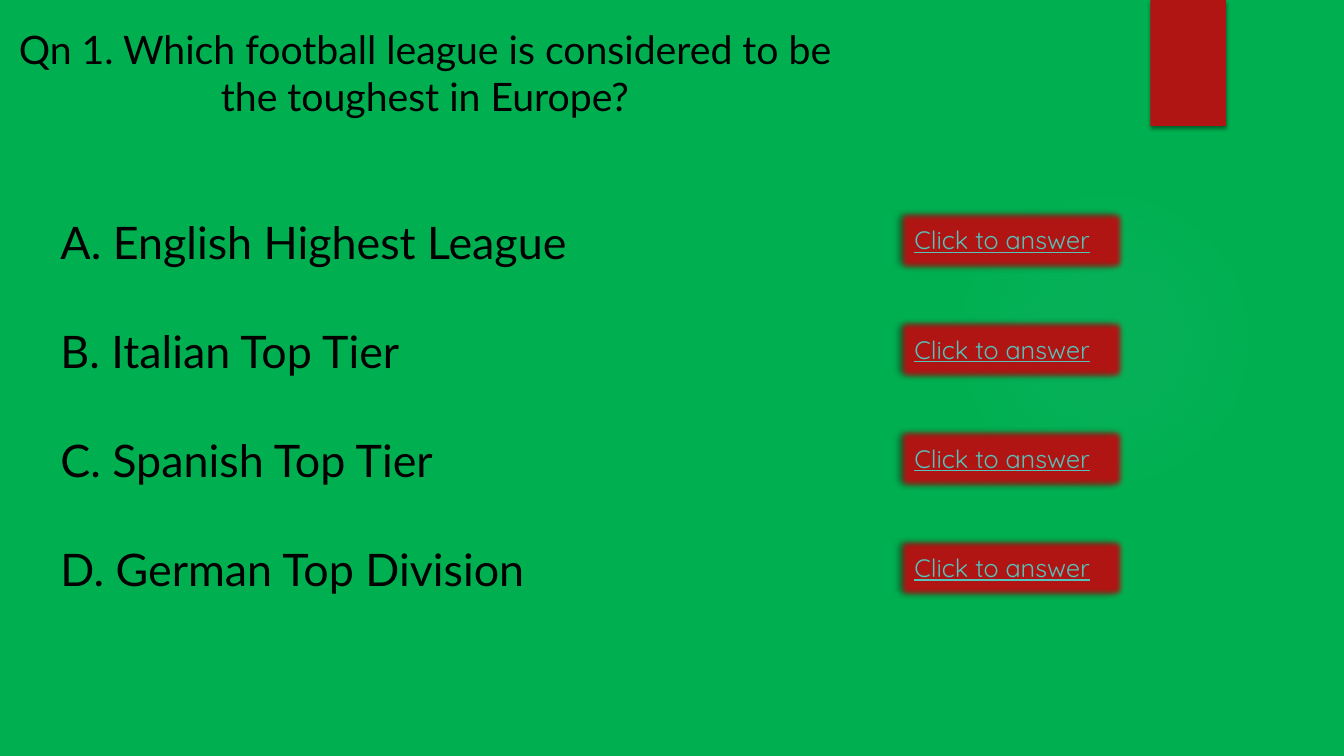
from dataclasses import dataclass

from lxml.etree import SubElement
from pptx import Presentation
from pptx.dml.color import RGBColor
from pptx.enum.shapes import MSO_SHAPE
from pptx.enum.text import MSO_ANCHOR, PP_ALIGN
from pptx.oxml import parse_xml
from pptx.oxml.ns import nsdecls, qn
from pptx.util import Inches, Pt


@dataclass(frozen=True)
class Theme:
    """Colours, fonts and type sizes of the quiz."""
    pitch: str = "00B050"
    ink: str = "000000"
    red: str = "B01513"
    red_edge: str = "82100E"
    glow: str = "50B9C1"
    link: str = "58C1BA"
    text_font: str = "Lato"
    button_font: str = "Quicksand"
    question_size: int = 28
    answer_size: int = 32
    button_size: int = 18


THEME = Theme()
QUESTION = "Qn 1. Which football league is considered to be the toughest in Europe?"
ANSWERS = [
    "A. English Highest League",
    "B. Italian Top Tier",
    "C. Spanish Top Tier",
    "D. German Top Division",
]
BUTTON_LABEL = "Click to answer"
FIRST_ROW = 2.08
ROW_STEP = 3.25 / 3


def write(frame, text, font, size, color, align=PP_ALIGN.LEFT, underline=False):
    """Write one wrapped run at the top of a text frame."""
    frame.word_wrap = True
    frame.vertical_anchor = MSO_ANCHOR.TOP
    paragraph = frame.paragraphs[0]
    paragraph.alignment = align
    run = paragraph.add_run()
    run.text = text
    run.font.name = font
    run.font.size = Pt(size)
    run.font.underline = underline
    run.font.color.rgb = RGBColor.from_string(color)


def add_panel(shapes, left, top, width, height, edge=None):
    """Add a red rectangle, outlined only if an edge colour is given."""
    panel = shapes.add_shape(MSO_SHAPE.RECTANGLE, Inches(left), Inches(top),
                             Inches(width), Inches(height))
    panel.fill.solid()
    panel.fill.fore_color.rgb = RGBColor.from_string(THEME.red)
    if edge:
        panel.line.color.rgb = RGBColor.from_string(edge)
        panel.line.width = Pt(1.5)
    else:
        panel.line.fill.background()
    return panel


def set_effects(shape, alpha, blur, distance, angle, soft_edge=0):
    """Give a shape a cast shadow and, if wanted, a soft edge."""
    shape.shadow.inherit = False
    effects = shape._element.spPr.find(qn("a:effectLst"))
    shadow = SubElement(effects, qn("a:outerShdw"), blurRad=str(Pt(blur)),
                        dist=str(Pt(distance)), dir=str(angle * 60000),
                        rotWithShape="0")
    color = SubElement(shadow, qn("a:srgbClr"), val=THEME.ink)
    SubElement(color, qn("a:alpha"), val=str(alpha * 1000))
    if soft_edge:
        SubElement(effects, qn("a:softEdge"), rad=str(Pt(soft_edge)))


def add_glow(shapes):
    """Add the faint round glow behind the buttons."""
    glow = shapes.add_shape(MSO_SHAPE.OVAL, Inches(9.41), Inches(1.83),
                            Inches(3.08), Inches(3.08))
    glow.shadow.inherit = False
    glow.line.fill.background()
    stops = "".join(
        f'<a:gs pos="{position * 1000}"><a:srgbClr val="{THEME.glow}">'
        f'<a:alpha val="{alpha * 1000}"/></a:srgbClr></a:gs>'
        for position, alpha in ((0, 7), (36, 6), (69, 0), (100, 0)))
    gradient = parse_xml(
        f'<a:gradFill {nsdecls("a")}><a:gsLst>{stops}</a:gsLst>'
        '<a:path path="circle"><a:fillToRect l="50000" t="50000" r="50000" b="50000"/>'
        '</a:path></a:gradFill>')
    glow._element.spPr.find(qn("a:prstGeom")).addnext(gradient)


def add_question(slide):
    """Place the question in the title placeholder."""
    title = slide.shapes.title
    title.left, title.top = Inches(0), Inches(0.2)
    title.width, title.height = Inches(8.43), Inches(1.04)
    write(title.text_frame, QUESTION, THEME.text_font, THEME.question_size,
          THEME.ink, PP_ALIGN.CENTER)


def add_answer(shapes, top, text):
    """Add one indented answer line."""
    answer = shapes.add_textbox(Inches(0), Inches(top), Inches(8.43), Inches(0.64))
    answer.text_frame.margin_left = Inches(0.6)
    write(answer.text_frame, text, THEME.text_font, THEME.answer_size, THEME.ink)


def add_button(shapes, top):
    """Add a grouped button with its underlined label."""
    button = shapes.add_group_shape()
    panel = add_panel(button.shapes, 8.88, top, 2.3, 0.65, THEME.red_edge)
    set_effects(panel, alpha=40, blur=4, distance=3, angle=180, soft_edge=5)
    label = button.shapes.add_textbox(Inches(8.97), Inches(top + 0.12),
                                      Inches(2.12), Inches(0.4))
    write(label.text_frame, BUTTON_LABEL, THEME.button_font, THEME.button_size,
          THEME.link, underline=True)


def main():
    """Build the quiz slide and save it."""
    deck = Presentation()
    deck.slide_width, deck.slide_height = Inches(13.33), Inches(7.5)
    slide = deck.slides.add_slide(deck.slide_layouts[5])
    slide.background.fill.solid()
    slide.background.fill.fore_color.rgb = RGBColor.from_string(THEME.pitch)

    add_glow(slide.shapes)
    ribbon = add_panel(slide.shapes, 11.41, 0, 0.75, 1.25)
    set_effects(ribbon, alpha=45, blur=3, distance=2, angle=90)
    add_question(slide)
    for row, answer in enumerate(ANSWERS):
        top = FIRST_ROW + row * ROW_STEP
        add_answer(slide.shapes, top, answer)
        add_button(slide.shapes, top - 0.02)
    deck.save("out.pptx")


if __name__ == "__main__":
    main()
